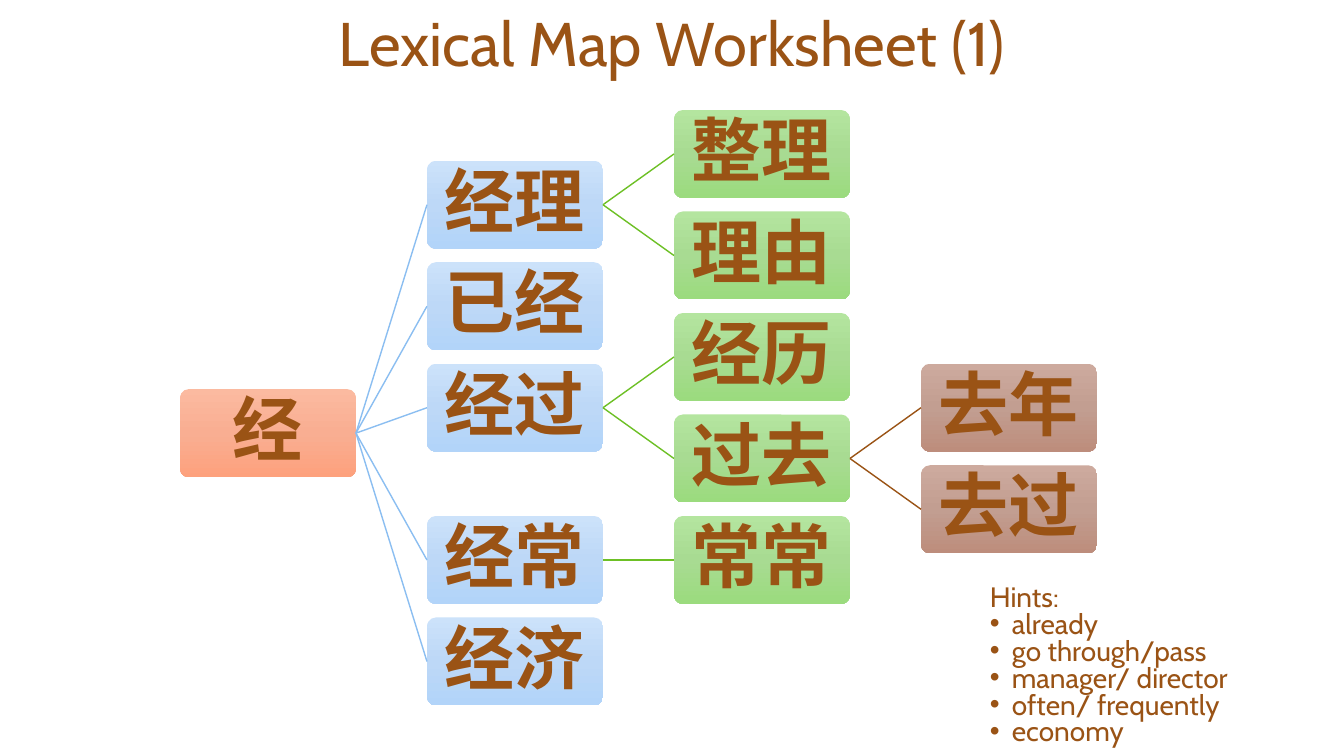
from copy import deepcopy

from pptx import Presentation
from pptx.dml.color import RGBColor
from pptx.enum.shapes import MSO_CONNECTOR, MSO_SHAPE
from pptx.enum.text import MSO_ANCHOR, PP_ALIGN
from pptx.oxml.ns import qn
from pptx.util import Pt
from lxml.etree import SubElement

PX = 914400 / 100.8
COLOURS = {"text": "9A5315", "blue line": "8BBEF1", "green line": "6DC025", "brown line": "9A5315"}
LEVEL_FILLS = [
    ("FBBAA0", "F9AE92", "FDA17D"),
    ("CCE2FA", "BDD8F7", "B2D4F9"),
    ("B4E59F", "A8DB92", "9BDB7E"),
    ("CDAA9E", "C29E91", "BD8D7C"),
]
LEVEL_LINES = [None, "blue line", "green line", "brown line"]
LATIN_FONT, CHINESE_FONT = "Cabin", "Noto Sans CJK SC"

BOX_WIDTH, BOX_HEIGHT = 176, 88
MAP_LEFT, MAP_TOP = 180, 110
COLUMN_STEP = 247
TWO_ROWS = 203  # height of four half-row steps

# A word is followed by its list of branches, or by its half-row if it has none.
WORD_TREE = ("经", [
    ("经理", [("整理", 0), ("理由", 2)]),
    ("已经", 3),
    ("经过", [("经历", 4), ("过去", [("去年", 5), ("去过", 7)])]),
    ("经常", [("常常", 8)]),
    ("经济", 10),
])
HINTS = ["already", "go through/pass", "manager/ director", "often/ frequently", "economy"]


def emu(pixels):
    return round(pixels * PX)


def rgb(hex_colour):
    return RGBColor.from_string(hex_colour)


def add_span(paragraph, text, size, bold=False):
    span = paragraph.add_run()
    span.text = text
    font = span.font
    font.size = Pt(size)
    font.bold = bold
    font.name = LATIN_FONT
    font.color.rgb = rgb(COLOURS["text"])
    SubElement(font._element, qn("a:ea")).set("typeface", CHINESE_FONT)


def fill_gradient(box, colours):
    """Fill from top to bottom with evenly spaced colours."""
    box.fill.gradient()
    box.fill.gradient_angle = 270
    stop_list = box._element.spPr.find(qn("a:gradFill")).find(qn("a:gsLst"))
    stop_list.append(deepcopy(stop_list[0]))
    for index, (stop, colour) in enumerate(zip(box.fill.gradient_stops, colours)):
        stop.position = index / (len(colours) - 1)
        stop.color.rgb = rgb(colour)


def add_word_box(page, word, level, row):
    box = page.shapes.add_shape(
        MSO_SHAPE.ROUNDED_RECTANGLE,
        emu(MAP_LEFT + level * COLUMN_STEP), emu(MAP_TOP + row * TWO_ROWS / 4),
        emu(BOX_WIDTH), emu(BOX_HEIGHT))
    box.adjustments[0] = 0.1
    box.shadow.inherit = False
    box.line.fill.background()
    fill_gradient(box, LEVEL_FILLS[level])
    frame = box.text_frame
    frame.word_wrap = True
    frame.vertical_anchor = MSO_ANCHOR.MIDDLE
    frame.margin_left = frame.margin_right = frame.margin_top = frame.margin_bottom = emu(6)
    paragraph = frame.paragraphs[0]
    paragraph.alignment = PP_ALIGN.CENTER
    paragraph.line_spacing = 0.9
    add_span(paragraph, word, 50, bold=True)
    return box


def add_branch_line(page, parent, child, level):
    line = page.shapes.add_connector(MSO_CONNECTOR.STRAIGHT, 0, 0, 0, 0)
    line.begin_connect(parent, 3)
    line.end_connect(child, 1)
    line.line.color.rgb = rgb(COLOURS[LEVEL_LINES[level]])
    line.line.width = Pt(1)
    SubElement(line._element.spPr, qn("a:effectLst"))


def row_of(branches):
    """Half-row of a word: midway between its first and last branch."""
    if not isinstance(branches, list):
        return branches
    return (row_of(branches[0][1]) + row_of(branches[-1][1])) / 2


def add_word_tree(page, tree, level=0):
    word, branches = tree
    box = add_word_box(page, word, level, row_of(branches))
    if isinstance(branches, list):
        for branch in branches:
            child = add_word_tree(page, branch, level + 1)
            add_branch_line(page, box, child, level + 1)
    return box


def add_text_frame(page, left, top, width, height):
    box = page.shapes.add_textbox(emu(left), emu(top), emu(width), emu(height))
    box.text_frame.word_wrap = True
    return box.text_frame


def add_title(page, text):
    paragraph = add_text_frame(page, 0, 0, 1344, 109).paragraphs[0]
    paragraph.alignment = PP_ALIGN.CENTER
    add_span(paragraph, text, 44)


def add_bullet(paragraph, indent):
    properties = paragraph._p.get_or_add_pPr()
    properties.set("marL", str(emu(indent)))
    properties.set("indent", str(-emu(indent)))
    SubElement(properties, qn("a:buFont")).set("typeface", "Arial")
    SubElement(properties, qn("a:buChar")).set("char", "•")


def add_hints(page, heading, hints):
    frame = add_text_frame(page, 980, 581, 356, 173)
    paragraph = frame.paragraphs[0]
    paragraph.line_spacing = 0.8
    add_span(paragraph, heading, 20)
    for hint in hints:
        paragraph = frame.add_paragraph()
        add_bullet(paragraph, 22)
        paragraph.line_spacing = 0.8
        add_span(paragraph, hint, 20)


def main():
    deck = Presentation()
    deck.slide_width, deck.slide_height = emu(1344), emu(756)
    page = deck.slides.add_slide(deck.slide_layouts[6])
    add_word_tree(page, WORD_TREE)
    add_hints(page, "Hints:", HINTS)
    add_title(page, "Lexical Map Worksheet (1)")
    deck.save("out.pptx")


if __name__ == "__main__":
    main()
